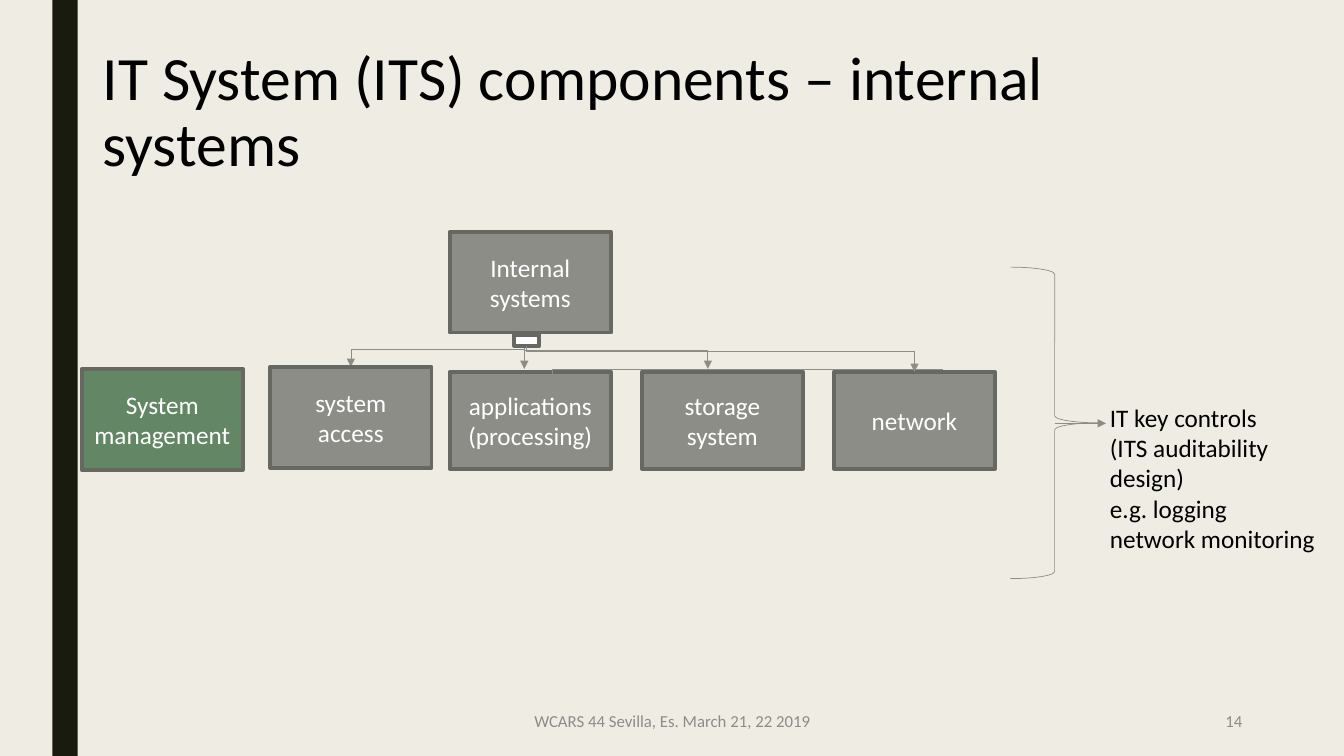
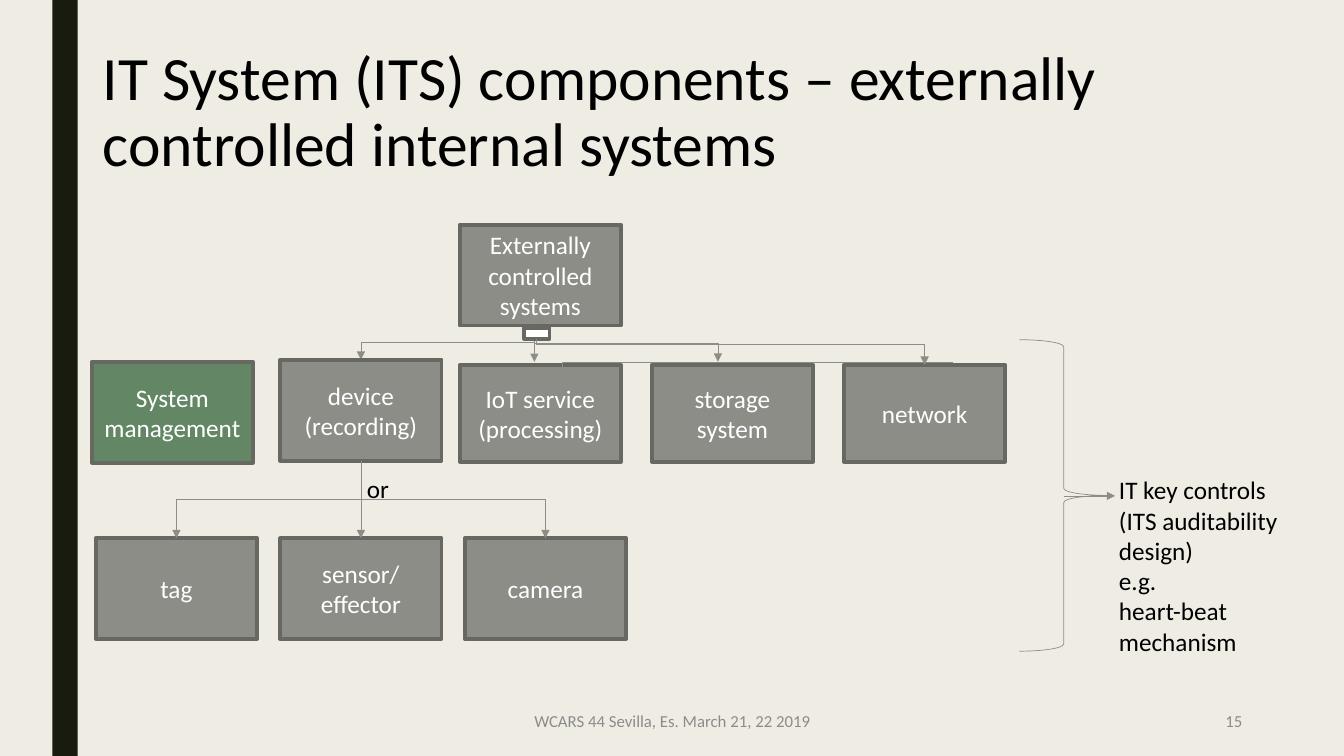
"""Build two slides on the components of an IT system."""
from dataclasses import dataclass

import lxml.etree
import pptx
import pptx.dml.color
import pptx.enum.shapes
import pptx.enum.text
import pptx.oxml.ns
import pptx.util

SHAPE = pptx.enum.shapes.MSO_SHAPE
CONNECTOR = pptx.enum.shapes.MSO_CONNECTOR
ALIGN = pptx.enum.text.PP_ALIGN
ANCHOR = pptx.enum.text.MSO_ANCHOR
qn = pptx.oxml.ns.qn


@dataclass(frozen=True)
class Theme:
    """Colours, type sizes and line widths of the deck."""
    font: str = "Calibri"
    paper: str = "EFEDE3"
    band: str = "191B0E"
    ink: str = "000000"
    white: str = "FFFFFF"
    grey: str = "8C8D86"
    green: str = "638764"
    border: str = "686863"
    muted: str = "8B8B8B"
    title: int = 44
    body: int = 18
    footer: int = 12
    thick: float = 2.75
    thin: float = 0.5


T = Theme()


def px(n):
    """Turn px, 100 to the inch, into EMU."""
    return pptx.util.Emu(int(n * 9144))


def rgb(code):
    """Turn a hex code into a colour."""
    return pptx.dml.color.RGBColor.from_string(code)


def write(tf, text, size=T.body, color=T.ink, align=ALIGN.LEFT, anchor=ANCHOR.TOP,
          wrap=True, spacing=None):
    """Fill a text frame, one paragraph for each line of text."""
    tf.word_wrap = wrap
    tf.vertical_anchor = anchor
    for i, line in enumerate(text.split("\n")):
        p = tf.add_paragraph() if i else tf.paragraphs[0]
        p.alignment = align
        p.line_spacing = spacing
        r = p.add_run()
        r.text = line
        r.font.name = T.font
        r.font.size = pptx.util.Pt(size)
        r.font.color.rgb = rgb(color)


def add_text(s, x, y, w, h, text, **fmt):
    """Add a text box."""
    sp = s.shapes.add_textbox(px(x), px(y), px(w), px(h))
    write(sp.text_frame, text, **fmt)


def add_shape(s, kind, x, y, w, h, fill=None, line=None, width=T.thick):
    """Add a preset shape without a shadow."""
    sp = s.shapes.add_shape(kind, px(x), px(y), px(w), px(h))
    sp.shadow.inherit = False
    if fill:
        sp.fill.solid()
        sp.fill.fore_color.rgb = rgb(fill)
    else:
        sp.fill.background()
    if line:
        sp.line.color.rgb = rgb(line)
        sp.line.width = pptx.util.Pt(width)
    else:
        sp.line.fill.background()
    return sp


def add_box(s, x, y, text, h=100, fill=T.grey):
    """Add a bordered component box with a centred label."""
    sp = add_shape(s, SHAPE.RECTANGLE, x, y, 160, h, fill, T.border)
    write(sp.text_frame, text, color=T.white, align=ALIGN.CENTER, anchor=ANCHOR.MIDDLE)
    return sp


def add_arrow(s, x1, y1, x2, y2, kind=CONNECTOR.STRAIGHT):
    """Add a thin connector with an arrowhead at its end."""
    c = s.shapes.add_connector(kind, px(x1), px(y1), px(x2), px(y2))
    c.line.color.rgb = rgb(T.grey)
    c.line.width = pptx.util.Pt(T.thin)
    spPr = c.element.spPr
    lxml.etree.SubElement(spPr.find(qn("a:ln")), qn("a:tailEnd"), type="triangle")
    lxml.etree.SubElement(spPr, qn("a:effectLst"))
    return c


def add_drop(s, x1, y1, x2, y2, turn=0.5):
    """Add an elbow arrow that goes down, across and down again."""
    cx, cy = (x1 + x2) / 2, (y1 + y2) / 2
    half_w, half_h = (y2 - y1) / 2, abs(x2 - x1) / 2
    side = 1 if x2 > x1 else -1
    c = add_arrow(s, cx + side * half_w, cy - half_h, cx - side * half_w, cy + half_h,
                  CONNECTOR.ELBOW)
    c.rotation = 270 if side > 0 else 90
    geom = c.element.spPr.find(qn("a:prstGeom"))
    lxml.etree.SubElement(geom.find(qn("a:avLst")), qn("a:gd"),
                          name="adj1", fmla=f"val {round(turn * 100000)}")


def add_corner(s, x1, y1, x2, y2):
    """Add an elbow arrow that goes across and then down."""
    c = add_arrow(s, x1, y1, x2, y2, CONNECTOR.ELBOW)
    c.element.spPr.find(qn("a:prstGeom")).set("prst", "bentConnector2")


def add_tree(s, x, y, root, first, others):
    """Add the root box, its row of components and their arrows; return the first."""
    add_box(s, x, y, root)
    for dx, dy in ((256, 136), (-98, 134)):
        add_drop(s, x + 74, y + 100, x + dx, y + dy)
    add_arrow(s, x + 74, y + 100, x + 74, y + 136)
    add_shape(s, SHAPE.RECTANGLE, x + 64, y + 102, 25, 11, T.white, T.border)
    sp = add_box(s, x - 178, y + 134, first)
    for i, label in enumerate(others):
        add_box(s, x + 190.5 * i, y + 139, label, h=96)
    add_drop(s, x + 76, y + 113, x + 461, y + 139, turn=0.21)
    add_corner(s, x + 489, y + 136, x + 102, y + 158)
    add_box(s, x - 365, y + 136, "System\nmanagement", fill=T.green)
    return sp


def add_options(s, parent, x, y, labels):
    """Add the alternatives below a component, the middle one straight under it."""
    step, mid, top = 183, x + 263, y - 77
    tag, sensor, camera = [add_box(s, x + step * i, y, t) for i, t in enumerate(labels)]
    for side in (-1, 1):
        add_drop(s, mid, top, mid + side * step, y)
    c = add_arrow(s, mid, top, mid, y)
    c.begin_connect(parent, 2)
    c.end_connect(sensor, 0)
    add_text(s, mid - 4, top + 8, 42, 40, "or", wrap=False)


def add_controls(s, x, y, w, examples):
    """Add the brace that leads to the key controls."""
    sp = add_shape(s, SHAPE.RIGHT_BRACE, x, y, 88, 309, line=T.grey, width=T.thin)
    sp.adjustments[0] = 0.08
    text = "IT key controls\n(ITS auditability\ndesign)\n" + examples
    add_text(s, x + 89, y + 129, w, 30 * len(text.split("\n")) + 10, text, wrap=False)
    add_arrow(s, x + 44, y + 155, x + 95, y + 155)


def add_slide(prs, title, number):
    """Add a slide with the shared band, title and footer."""
    s = prs.slides.add_slide(prs.slide_layouts[6])
    add_shape(s, SHAPE.RECTANGLE, 52, 0, 25, 750, T.band)
    add_text(s, 92, 40, 1150, 145, title, size=T.title, anchor=ANCHOR.MIDDLE, spacing=0.9)
    footer = dict(size=T.footer, color=T.muted, anchor=ANCHOR.MIDDLE)
    add_text(s, 442, 695, 450, 40, "WCARS 44 Sevilla, Es. March 21, 22 2019",
             align=ALIGN.CENTER, **footer)
    add_text(s, 942, 695, 300, 40, str(number), align=ALIGN.RIGHT, **footer)
    return s


def main():
    """Build and save the deck."""
    prs = pptx.Presentation()
    prs.slide_width, prs.slide_height = px(1333), px(750)
    fill = prs.slide_master.background.fill
    fill.solid()
    fill.fore_color.rgb = rgb(T.paper)

    s = add_slide(prs, "IT System (ITS) components – internal systems", 14)
    add_tree(s, 446, 230, "Internal systems", "system access",
             ["applications\n(processing)", "storage\nsystem", "network"])
    add_controls(s, 1002, 265, 223, "e.g. logging\nnetwork monitoring")

    s = add_slide(
        prs, "IT System (ITS) components – externally controlled internal systems", 15)
    device = add_tree(s, 456, 223, "Externally controlled systems", "device\n(recording)",
                      ["IoT service\n(processing)", "storage\nsystem", "network"])
    add_options(s, device, 95, 534, ["tag", "sensor/\neffector", "camera"])
    add_controls(s, 1011, 337, 177, "e.g.\nheart-beat\nmechanism")

    prs.save("out.pptx")


if __name__ == "__main__":
    main()
